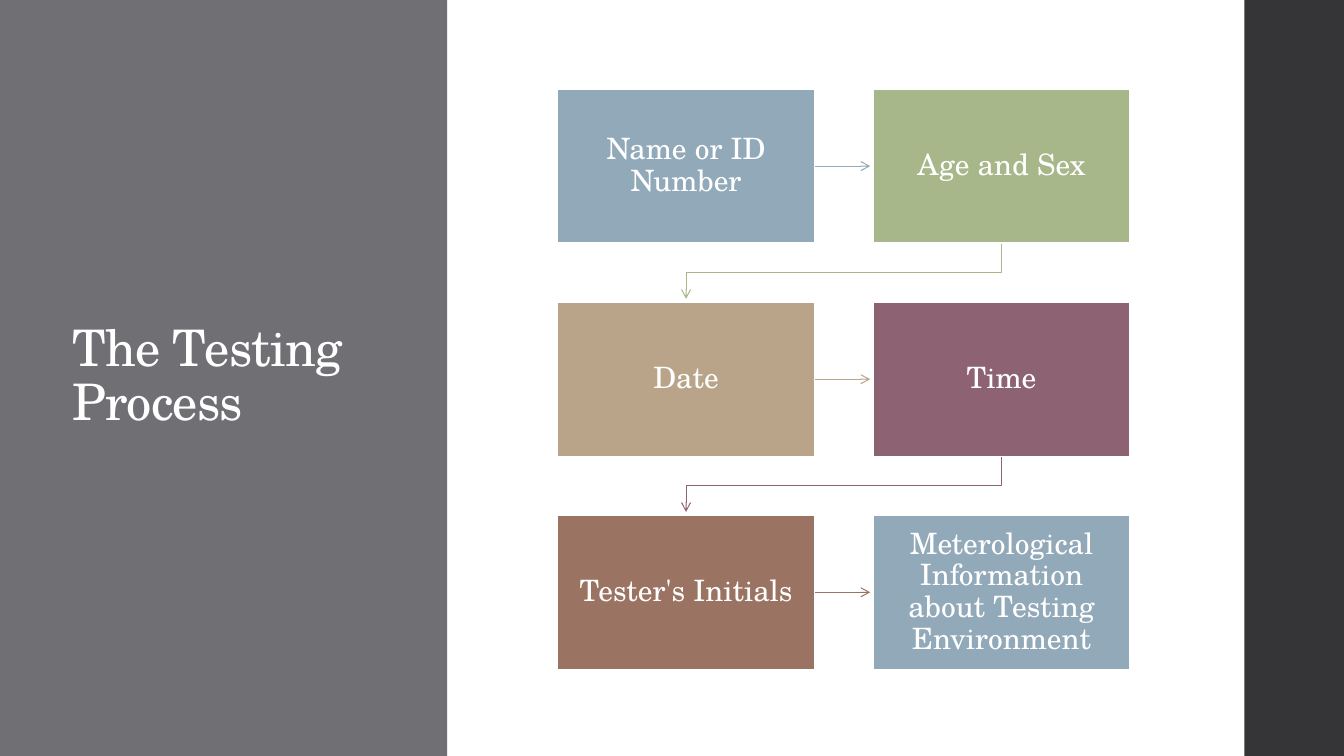
"""Build the testing process slide: a title panel beside a six-step flow."""
from lxml.etree import SubElement
from pptx import Presentation
from pptx.dml.color import RGBColor
from pptx.enum.shapes import MSO_CONNECTOR, MSO_SHAPE
from pptx.enum.text import MSO_ANCHOR, PP_ALIGN
from pptx.oxml.ns import qn
from pptx.util import Cm, Pt

WHITE = RGBColor(0xFF, 0xFF, 0xFF)
GRAY = RGBColor(0x6F, 0x6F, 0x74)
CHARCOAL = RGBColor(0x35, 0x35, 0x37)
BLUE = RGBColor(0x92, 0xA9, 0xB9)
GREEN = RGBColor(0xA7, 0xB7, 0x89)
TAN = RGBColor(0xB9, 0xA4, 0x89)
PLUM = RGBColor(0x8D, 0x63, 0x74)
BROWN = RGBColor(0x9B, 0x73, 0x62)

FONT = "TeX Gyre Schola"
TITLE = "The Testing Process"
STEPS = [
    ("Name or ID Number", BLUE),
    ("Age and Sex", GREEN),
    ("Date", TAN),
    ("Time", PLUM),
    ("Tester's Initials", BROWN),
    ("Meterological Information about Testing Environment", BLUE),
]

SLIDE_WIDTH, SLIDE_HEIGHT = Cm(33.87), Cm(19.05)
COLUMNS = 2
LEFT, TOP = Cm(14.05), Cm(2.24)
BOX_WIDTH, BOX_HEIGHT = Cm(6.48), Cm(3.89)
COLUMN_PITCH, ROW_PITCH = Cm(7.95), Cm(5.37)
ARROW_LENGTH, ELBOW_DROP = Cm(1.4), Cm(0.74)


def write(box, text, size, align=PP_ALIGN.LEFT, margins=(0.25, 0.13), spacing=None):
    """Put one formatted, vertically centred paragraph into a box."""
    frame = box.text_frame
    frame.word_wrap = True
    frame.vertical_anchor = MSO_ANCHOR.MIDDLE
    frame.margin_left = frame.margin_right = Cm(margins[0])
    frame.margin_top = frame.margin_bottom = Cm(margins[1])
    para = frame.paragraphs[0]
    para.alignment = align
    para.line_spacing = 0.9
    span = para.add_run()
    span.text = text
    span.font.name = FONT
    span.font.size = Pt(size)
    span.font.color.rgb = WHITE
    if spacing is not None:
        span.font._element.set("spc", str(round(spacing * 100)))


def add_panel(page, left, top, width, height, color):
    """Add a plain filled rectangle."""
    panel = page.shapes.add_shape(MSO_SHAPE.RECTANGLE, left, top, width, height)
    panel.shadow.inherit = False
    panel.fill.solid()
    panel.fill.fore_color.rgb = color
    panel.line.fill.background()
    return panel


def finish_arrow(arrow, color):
    """Give a line its colour, weight and open arrowhead, without shadow."""
    arrow.line.color.rgb = color
    arrow.line.width = Pt(0.75)
    properties = arrow._element.spPr
    SubElement(properties.find(qn("a:ln")), qn("a:tailEnd"), type="arrow")
    SubElement(properties, qn("a:effectLst"))


def add_arrow(page, column, left, top, color):
    """Lead from a step to the next one, across or down to a new row."""
    if column < COLUMNS - 1:
        start, middle = left + BOX_WIDTH, top + BOX_HEIGHT // 2
        arrow = page.shapes.add_connector(
            MSO_CONNECTOR.STRAIGHT, start, middle, start + ARROW_LENGTH, middle)
    else:
        start, bottom = left + BOX_WIDTH // 2, top + BOX_HEIGHT
        end = start - column * COLUMN_PITCH
        outline = page.shapes.build_freeform(start, bottom)
        outline.add_line_segments(
            [(start, bottom + ELBOW_DROP), (end, bottom + ELBOW_DROP),
             (end, bottom + ARROW_LENGTH)], close=False)
        arrow = outline.convert_to_shape()
        arrow.fill.background()
    finish_arrow(arrow, color)


def main():
    """Draw the panels, the title and the flow, then save."""
    deck = Presentation()
    deck.slide_width, deck.slide_height = SLIDE_WIDTH, SLIDE_HEIGHT
    page = deck.slides.add_slide(deck.slide_layouts[6])

    add_panel(page, 0, 0, Cm(11.27), SLIDE_HEIGHT, GRAY)
    title = page.shapes.add_textbox(Cm(1.57), Cm(2.31), Cm(7.54), Cm(14.4))
    write(title, TITLE, 36, spacing=-0.5)
    add_panel(page, Cm(31.36), 0, SLIDE_WIDTH - Cm(31.36), SLIDE_HEIGHT, CHARCOAL)

    for index, (text, color) in enumerate(STEPS):
        row, column = divmod(index, COLUMNS)
        left, top = LEFT + column * COLUMN_PITCH, TOP + row * ROW_PITCH
        if index < len(STEPS) - 1:
            add_arrow(page, column, left, top, color)
        box = add_panel(page, left, top, BOX_WIDTH, BOX_HEIGHT, color)
        box.line.color.rgb = WHITE
        box.line.width = Pt(1.1)
        write(box, text, 21, align=PP_ALIGN.CENTER, margins=(0.3, 0.33))

    deck.save("out.pptx")


if __name__ == "__main__":
    main()
